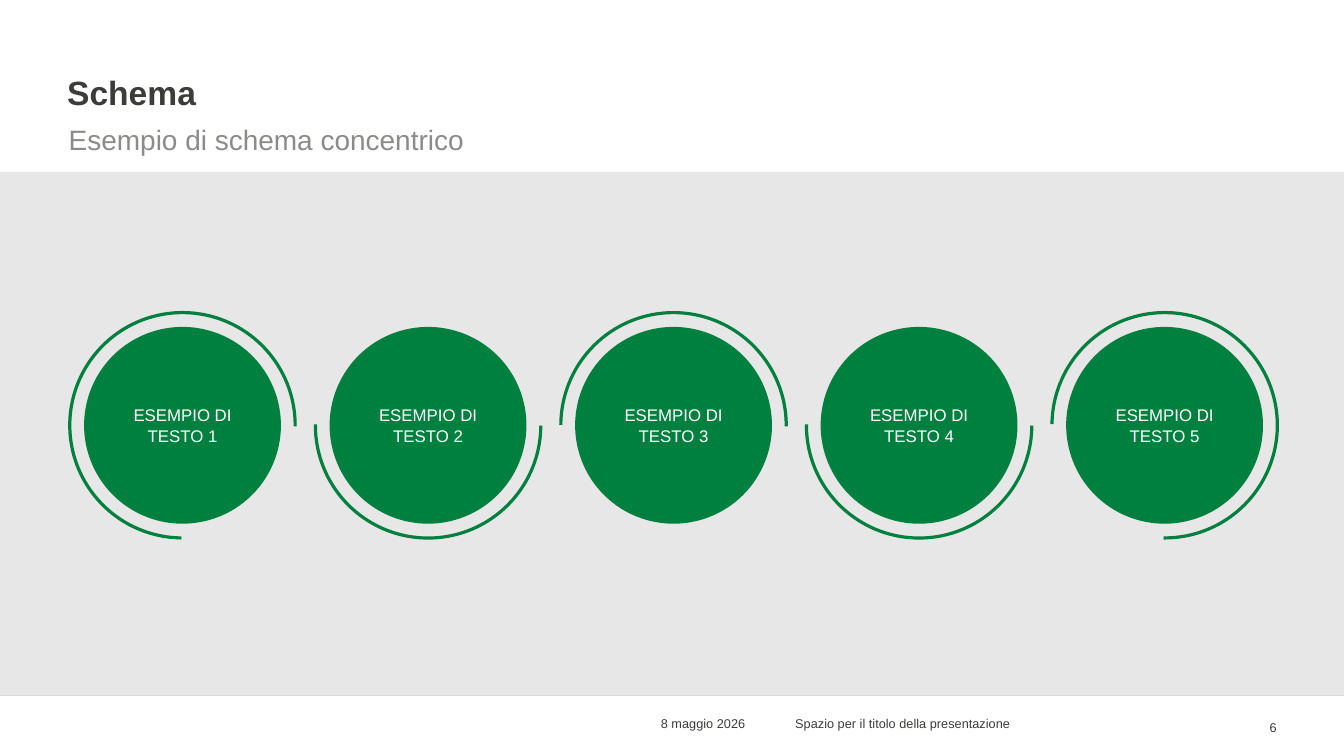
"""Build a slide with a row of five ringed discs."""
from dataclasses import dataclass

from lxml.etree import SubElement
from pptx import Presentation as Deck
from pptx.dml.color import RGBColor as Rgb
from pptx.enum.shapes import MSO_CONNECTOR as Link, MSO_SHAPE as Form
from pptx.enum.text import MSO_ANCHOR as Anchor, PP_ALIGN as Align
from pptx.oxml.ns import qn
from pptx.util import Cm, Pt


@dataclass(frozen=True)
class Theme:
    font: str = "Arial"
    dark: str = "3C3C3B"
    mute: str = "8B8B89"
    green: str = "00803F"
    band: str = "E7E7E7"
    rule: str = "BFBFBF"
    white: str = "FFFFFF"
    head: float = 18
    sub: float = 15
    disc: float = 9
    foot: float = 6.8


def write(shape, text, font, size, color, bold=False, align=Align.LEFT,
          anchor=Anchor.TOP, inset=(0.25, 0.13, 0.25, 0.13), lead=1.0):
    frame = shape.text_frame
    frame.word_wrap = True
    frame.vertical_anchor = anchor
    (frame.margin_left, frame.margin_top,
     frame.margin_right, frame.margin_bottom) = map(Cm, inset)
    para = frame.paragraphs[0]
    para.alignment = align
    para.line_spacing = lead
    run = para.add_run()
    run.text = text
    run.font.name = font
    run.font.size = Pt(size)
    run.font.bold = bold
    run.font.color.rgb = Rgb.from_string(color)


class Painter:
    def __init__(self, slide, theme):
        self.slide = slide
        self.theme = theme

    def text(self, box, text, size, color=None, **style):
        shape = self.slide.shapes.add_textbox(*map(Cm, box))
        write(shape, text, self.theme.font, size, color or self.theme.dark, **style)

    def shape(self, form, box, fill, home=None):
        shape = (home or self.slide).shapes.add_shape(form, *map(Cm, box))
        shape.shadow.inherit = False
        shape.fill.solid()
        shape.fill.fore_color.rgb = Rgb.from_string(fill)
        shape.line.fill.background()
        return shape

    def rule(self, left, right, top):
        line = self.slide.shapes.add_connector(
            Link.STRAIGHT, Cm(left), Cm(top), Cm(right), Cm(top))
        line.line.color.rgb = Rgb.from_string(self.theme.rule)
        line.line.width = Pt(0.25)
        SubElement(line._element.spPr, qn("a:effectLst"))

    def badge(self, left, top, text, start, turn):
        theme, ring, gap = self.theme, 4.32, 0.3
        size = ring - 2 * gap
        group = self.slide.shapes.add_group_shape()
        disc = self.shape(Form.OVAL, (left + gap, top + gap, size, size),
                          theme.green, group)
        write(disc, text, theme.font, theme.disc, theme.white,
              align=Align.CENTER, anchor=Anchor.MIDDLE)
        arc = self.shape(Form.BLOCK_ARC, (left, top, ring, ring), theme.green, group)
        arc.rotation = turn
        for spot, value in enumerate((start, 0.32, 1.4 / 100)):
            arc.adjustments[spot] = value


def main():
    deck = Deck()
    deck.slide_width, deck.slide_height = Cm(25.4), Cm(14.29)
    theme = Theme()
    draw = Painter(deck.slides.add_slide(deck.slide_layouts[6]), theme)

    draw.rule(0, 25.4, 13.15)
    draw.shape(Form.RECTANGLE, (0, 3.25, 25.4, 9.9), theme.band)
    draw.text((1.27, 0, 22.86, 2.26), "Schema", theme.head, bold=True,
              anchor=Anchor.BOTTOM, inset=(0, 0.13, 0.25, 0.13))
    draw.text((1.3, 2.13, 13.56, 1.12), "Esempio di schema concentrico", theme.sub,
              theme.mute, inset=(0, 0.13, 0.25, 0.13), lead=1.1)

    long, half = 54.34, 108.09
    arcs = ((long, 0), (half, 180), (half, 0), (half, 180), (long, 90))
    for step, (start, turn) in enumerate(arcs):
        draw.badge(1.29 + 4.64 * step, 5.88, f"ESEMPIO DI TESTO {step + 1}", start, turn)

    draw.text((12.24, 13.41, 2.54, 0.76), "8 maggio 2026", theme.foot)
    draw.text((14.78, 13.41, 8.05, 0.76), "Spazio per il titolo della presentazione",
              theme.foot)
    draw.text((23.09, 13.44, 1.04, 0.76), "6", theme.foot, align=Align.RIGHT,
              anchor=Anchor.MIDDLE, inset=(0.25, 0, 0, 0.13))
    deck.save("out.pptx")


if __name__ == "__main__":
    main()
